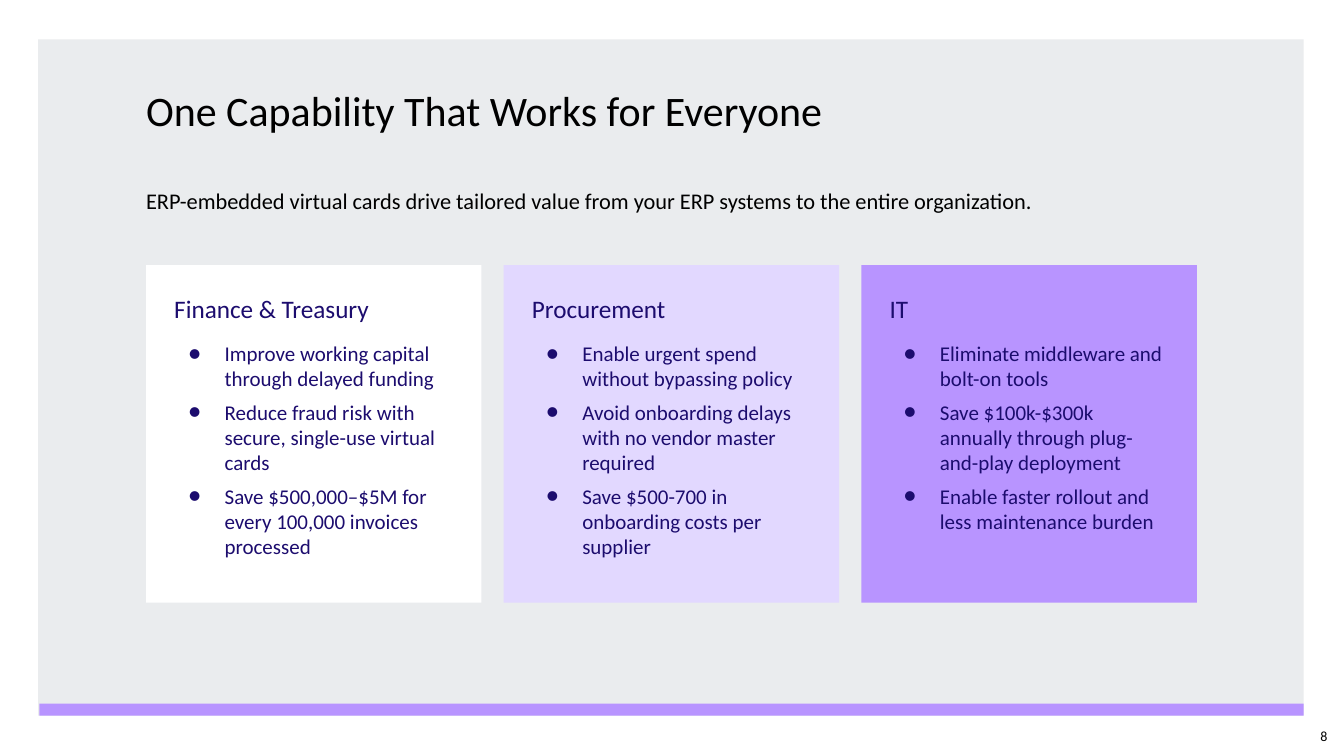
import pptx
import pptx.dml.color
import pptx.enum.shapes
import pptx.enum.text
import pptx.oxml.ns
import pptx.util
from lxml import etree

Inches = pptx.util.Inches
Pt = pptx.util.Pt
ALIGN = pptx.enum.text.PP_ALIGN
ANCHOR = pptx.enum.text.MSO_ANCHOR

FONT = "Calibri"
COLORS = {
    "panel": "EAECEE",
    "purple": "B894FF",
    "lavender": "E2D8FF",
    "white": "FFFFFF",
    "navy": "1C0C6E",
    "black": "000000",
}

# Card grid
CARD_LEFT, CARD_TOP = 1.45, 2.63
CARD_WIDTH, CARD_HEIGHT = 3.33, 3.35
CARD_STEP = 3.55
CARD_INSET = 0.28

CARDS = [
    ("Finance & Treasury", "white", [
        "Improve working capital through delayed funding",
        "Reduce fraud risk with secure, single-use virtual cards",
        "Save $500,000–$5M for every 100,000 invoices processed",
    ]),
    ("Procurement", "lavender", [
        "Enable urgent spend without bypassing policy",
        "Avoid onboarding delays with no vendor master required",
        "Save $500-700 in onboarding costs per supplier",
    ]),
    ("IT", "purple", [
        "Eliminate middleware and bolt-on tools",
        "Save $100k-$300k annually through plug-and-play deployment",
        "Enable faster rollout and less maintenance burden",
    ]),
]


def rgb(color):
    return pptx.dml.color.RGBColor.from_string(COLORS[color])


def style_paragraph(paragraph, size, color, align=ALIGN.LEFT):
    paragraph.alignment = align
    for run in paragraph.runs:
        run.font.name = FONT
        run.font.size = Pt(size)
        run.font.color.rgb = rgb(color)


def set_insets(text_frame, left, top, right, bottom):
    text_frame.margin_left = Inches(left)
    text_frame.margin_top = Inches(top)
    text_frame.margin_right = Inches(right)
    text_frame.margin_bottom = Inches(bottom)


def add_rectangle(slide, left, top, width, height, color):
    shape = slide.shapes.add_shape(
        pptx.enum.shapes.MSO_SHAPE.RECTANGLE,
        Inches(left), Inches(top), Inches(width), Inches(height))
    shape.shadow.inherit = False
    shape.fill.solid()
    shape.fill.fore_color.rgb = rgb(color)
    shape.line.fill.background()
    return shape


def add_label(slide, left, top, width, height, text, size,
              align=ALIGN.LEFT, anchor=ANCHOR.TOP):
    box = slide.shapes.add_textbox(
        Inches(left), Inches(top), Inches(width), Inches(height))
    text_frame = box.text_frame
    text_frame.word_wrap = True
    text_frame.vertical_anchor = anchor
    set_insets(text_frame, 0, 0, 0, 0)
    text_frame.text = text
    paragraph = text_frame.paragraphs[0]
    style_paragraph(paragraph, size, "black", align)
    return paragraph


def add_bullet(paragraph):
    properties = paragraph._p.get_or_add_pPr()
    properties.set("marL", str(Inches(0.5)))
    properties.set("indent", str(Inches(-0.36)))
    qn = pptx.oxml.ns.qn
    bullet_color = etree.SubElement(properties, qn("a:buClr"))
    etree.SubElement(bullet_color, qn("a:srgbClr"), val=COLORS["navy"])
    etree.SubElement(properties, qn("a:buFont"), typeface=FONT)
    etree.SubElement(properties, qn("a:buChar"), char="●")


def add_card(slide, left, heading, color, points):
    card = add_rectangle(slide, left, CARD_TOP, CARD_WIDTH, CARD_HEIGHT, color)
    text_frame = card.text_frame
    text_frame.word_wrap = True
    text_frame.vertical_anchor = ANCHOR.TOP
    set_insets(text_frame, CARD_INSET, CARD_INSET, CARD_INSET, 0)
    text_frame.text = "\n".join([heading] + points)
    title, *bullets = text_frame.paragraphs
    style_paragraph(title, 18, "navy")
    title.space_after = Pt(12)
    for paragraph in bullets:
        add_bullet(paragraph)
        style_paragraph(paragraph, 15, "navy")
        paragraph.space_after = Pt(6)


def main():
    presentation = pptx.Presentation()
    presentation.slide_width = Inches(13.34)
    presentation.slide_height = Inches(7.5)
    slide = presentation.slides.add_slide(presentation.slide_layouts[6])

    # Background panel, page number and accent bar
    add_rectangle(slide, 0.38, 0.39, 12.56, 6.71, "panel")
    add_label(slide, 12.94, 7.1, 0.4, 0.4, "8", 10, ALIGN.CENTER, ANCHOR.MIDDLE)
    add_rectangle(slide, 0.39, 6.98, 12.55, 0.12, "purple")

    # Title and lead sentence
    title = add_label(slide, CARD_LEFT, 0.9, 9.88, 0.66,
                      "One Capability That Works for Everyone", 30)
    title.line_spacing = 0.9
    add_label(slide, CARD_LEFT, 1.86, 10.43, 0.5,
              "ERP-embedded virtual cards drive tailored value from your "
              "ERP systems to the entire organization.", 16)

    # Audience cards
    for index, (heading, color, points) in enumerate(CARDS):
        add_card(slide, CARD_LEFT + index * CARD_STEP, heading, color, points)

    presentation.save("out.pptx")


if __name__ == "__main__":
    main()
